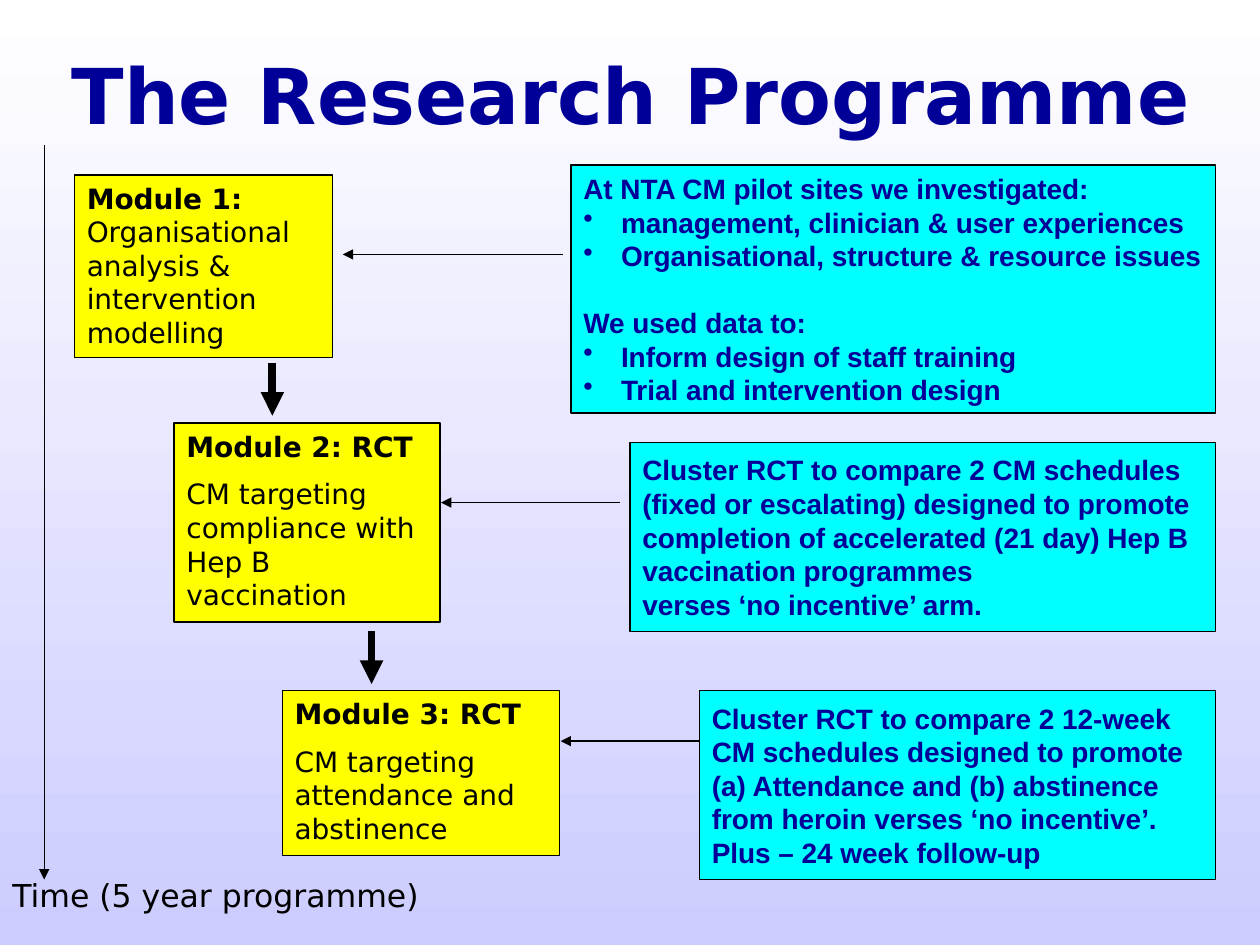
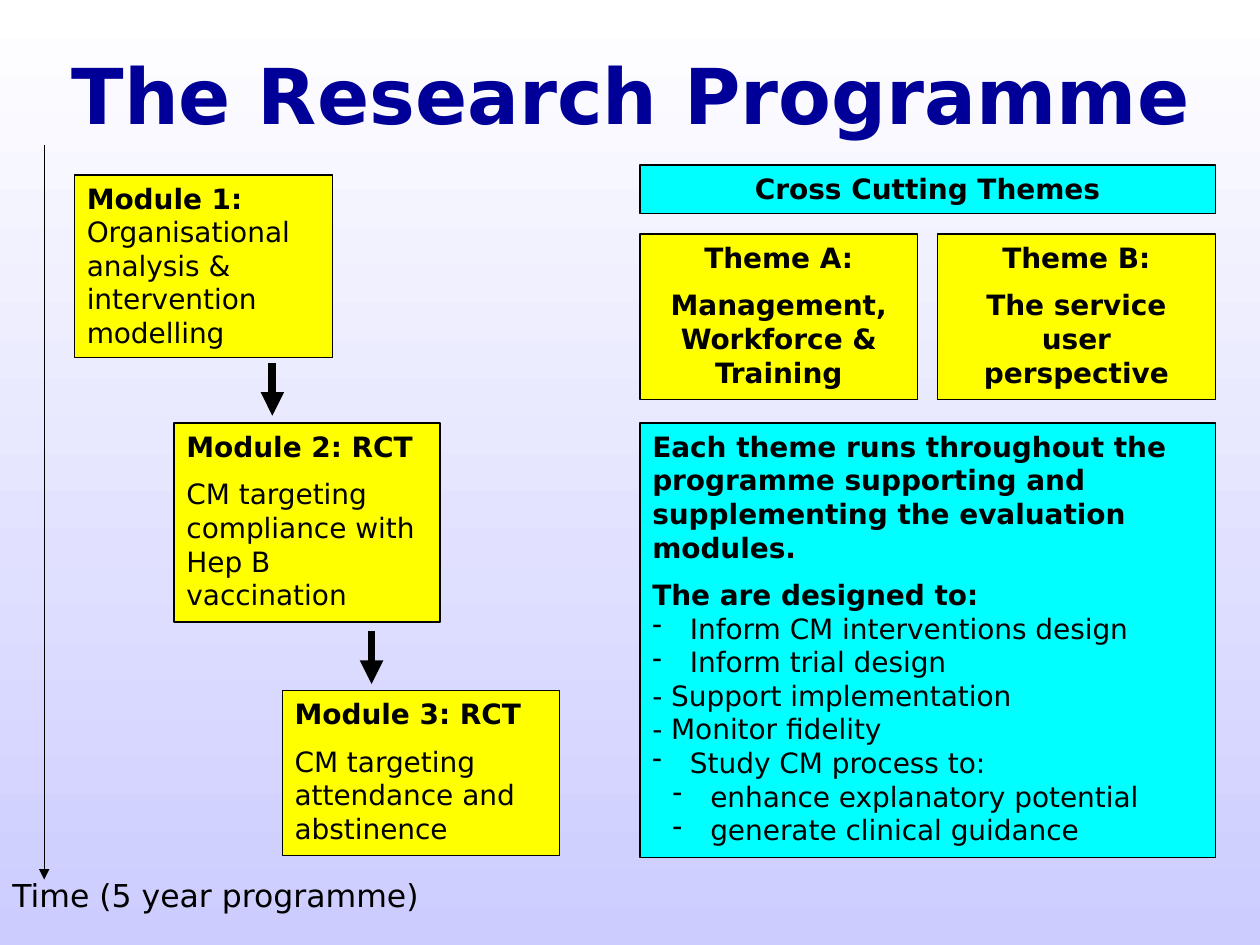
from dataclasses import dataclass
from lxml.etree import SubElement
from pptx import Presentation
from pptx.dml.color import RGBColor
from pptx.enum.shapes import MSO_CONNECTOR, MSO_SHAPE
from pptx.enum.text import MSO_ANCHOR, PP_ALIGN
from pptx.oxml.ns import qn
from pptx.util import Cm, Pt

COLOURS = {
    "title": "000099",
    "ink": "000000",
    "module": "FFFF00",
    "detail": "00FFFF",
    "sky": "FFFFFF",
    "ground": "CCCCFF",
}
RIGHT_EDGE = 24.5
HANGING = 0.76
NESTED_STEP = 0.41
STEP_TOPS = (3.53, 8.53, 13.92)


def colour(name):
    return RGBColor.from_string(COLOURS[name])


@dataclass
class Line:
    """One paragraph; a bold lead may open it, before is the space above in points."""
    text: str
    bold: bool = False
    lead: str = ""
    bullet: str = ""
    level: int = 0
    before: float = 0


class Slides:
    heading_font = "DejaVu Sans"
    detail_font = "Arial"
    body_size = 16

    def __init__(self):
        self.deck = Presentation()
        self.deck.slide_width, self.deck.slide_height = Cm(25.4), Cm(19.05)
        self.page = None

    def add_page(self):
        self.page = self.deck.slides.add_slide(self.deck.slide_layouts[6])
        fill = self.page.background.fill
        fill.gradient()
        fill.gradient_angle = 270
        for stop, name in zip(fill.gradient_stops, ("sky", "ground")):
            stop.color.rgb = colour(name)

    def add_lines(self, frame, lines, font, size, ink, align=PP_ALIGN.LEFT):
        for number, line in enumerate(lines):
            para = frame.add_paragraph() if number else frame.paragraphs[0]
            para.alignment = align
            para.space_before = Pt(line.before)
            if line.bullet:
                self.add_bullet(para, line)
            para.font.name, para.font.size = font, Pt(size)
            para.font.color.rgb = colour(ink)
            if line.lead:
                for text, bold in ((line.lead, True), (line.text, line.bold)):
                    span = para.add_run()
                    span.text, span.font.bold = text, bold
            else:
                para.font.bold = line.bold
                para.add_run().text = line.text

    def add_bullet(self, para, line):
        properties = para._p.get_or_add_pPr()
        properties.set("marL", str(Cm(HANGING + line.level * NESTED_STEP)))
        properties.set("indent", str(-Cm(HANGING)))
        SubElement(properties, qn("a:buChar")).set("char", line.bullet)

    def label(self, left, top, width, height, line, size, ink, align=PP_ALIGN.LEFT):
        box = self.page.shapes.add_textbox(Cm(left), Cm(top), Cm(width), Cm(height))
        box.text_frame.word_wrap = True
        box.text_frame.vertical_anchor = MSO_ANCHOR.MIDDLE
        self.add_lines(box.text_frame, [line], self.heading_font, size, ink, align)

    def panel(self, left, top, width, height, lines, fill, ink="ink", font=heading_font,
              align=PP_ALIGN.LEFT, anchor=MSO_ANCHOR.TOP, wrap=True):
        box = self.page.shapes.add_shape(
            MSO_SHAPE.RECTANGLE, Cm(left), Cm(top), Cm(width), Cm(height))
        box.shadow.inherit = False
        box.fill.solid()
        box.fill.fore_color.rgb = colour(fill)
        box.line.color.rgb = colour("ink")
        box.line.width = Pt(0.75)
        box.text_frame.word_wrap = wrap
        box.text_frame.vertical_anchor = anchor
        self.add_lines(box.text_frame, lines, font, self.body_size, ink, align)

    def detail(self, left, top, height, lines):
        """Blue bold text in a cyan panel that reaches the right edge."""
        self.panel(left, top, RIGHT_EDGE - left, height, lines, "detail", "title",
                   self.detail_font, anchor=MSO_ANCHOR.MIDDLE, wrap=False)

    def arrow(self, start, end, weight=0.75):
        line = self.page.shapes.add_connector(
            MSO_CONNECTOR.STRAIGHT, *(Cm(value) for value in (*start, *end)))
        line.line.color.rgb = colour("ink")
        line.line.width = Pt(weight)
        SubElement(line.line._get_or_add_ln(), qn("a:tailEnd")).set("type", "triangle")
        SubElement(line._element.spPr, qn("a:effectLst"))

    def programme(self):
        """Title, time axis and the three modules, shown on every page."""
        self.add_page()
        self.label(0.84, 0.84, 23.77, 2.08, Line("The Research Programme", bold=True),
                   44, "title", PP_ALIGN.CENTER)
        modules = (
            (1.5, 5.21, 3.68, [Line("Organisational analysis & intervention modelling",
                                    lead="Module 1: ")]),
            (3.51, 5.36, 4.01, [Line("Module 2: RCT", bold=True),
                                Line("CM targeting compliance with Hep B vaccination",
                                     before=8)]),
            (5.69, 5.59, 3.33, [Line("Module 3: RCT", bold=True),
                                Line("CM targeting attendance and abstinence", before=8)]),
        )
        for top, (left, width, height, lines) in zip(STEP_TOPS, modules):
            self.panel(left, top, width, height, lines, "module")
        for across, top in ((5.49, 7.32), (7.49, 12.73)):
            self.arrow((across, top), (across, top + 1.06), 4.5)
        self.arrow((0.89, 2.92), (0.89, 17.73))
        self.label(0, 17.53, 10.31, 1.02, Line("Time (5 year programme)"), 18, "ink")


def module_details(slides):
    slides.programme()
    slides.detail(11.51, 3.33, 5, [
        Line("At NTA CM pilot sites we investigated:", bold=True),
        Line("management, clinician & user experiences", bold=True, bullet="•"),
        Line("Organisational, structure & resource issues", bold=True, bullet="•"),
        Line("We used data to:", bold=True, before=19),
        Line("Inform design of staff training", bold=True, bullet="•"),
        Line("Trial and intervention design", bold=True, bullet="•"),
    ])
    trials = (
        (12.7, 8.92, ("Cluster RCT to compare 2 CM schedules",
                      "(fixed or escalating) designed to promote",
                      "completion of accelerated (21 day) Hep B",
                      "vaccination programmes",
                      "verses ‘no incentive’ arm.")),
        (14.1, 13.92, ("Cluster RCT to compare 2 12-week",
                       "CM schedules designed to promote",
                       "(a) Attendance and (b) abstinence",
                       "from heroin verses ‘no incentive’.",
                       "Plus – 24 week follow-up")),
    )
    for left, top, texts in trials:
        slides.detail(left, top, 3.81, [Line(text, bold=True) for text in texts])
    for start, end, height, weight in ((11.35, 6.91, 5.13, 0.25),
                                       (12.5, 8.89, 10.13, 0.75),
                                       (14.1, 11.3, 14.94, 0.75)):
        slides.arrow((start, height), (end, height), weight)


def cross_cutting_themes(slides):
    slides.programme()
    left, theme_width = 12.9, 5.6
    width = RIGHT_EDGE - left
    slides.panel(left, 3.33, width, 0.97, [Line("Cross Cutting Themes", bold=True)],
                 "detail", align=PP_ALIGN.CENTER)
    themes = (
        (left, "Theme A:", "Management, Workforce & Training"),
        (RIGHT_EDGE - theme_width, "Theme B:", "The service user perspective"),
    )
    for theme_left, name, subject in themes:
        slides.panel(theme_left, 4.72, theme_width, 3.33,
                     [Line(name, bold=True), Line(subject, bold=True, before=8)],
                     "module", align=PP_ALIGN.CENTER)
    slides.panel(left, 8.53, width, 8.76, [
        Line("Each theme runs throughout the programme supporting and "
             "supplementing the evaluation modules.", bold=True),
        Line("The are designed to:", bold=True, before=8),
        Line("Inform CM interventions design", bullet="-"),
        Line("Inform trial design", bullet="-"),
        Line("- Support implementation"),
        Line("- Monitor fidelity"),
        Line("Study CM process to:", bullet="-"),
        Line("enhance explanatory potential", bullet="-", level=1),
        Line("generate clinical guidance", bullet="-", level=1),
    ], "detail")


def main():
    slides = Slides()
    module_details(slides)
    cross_cutting_themes(slides)
    slides.deck.save("out.pptx")


if __name__ == "__main__":
    main()
